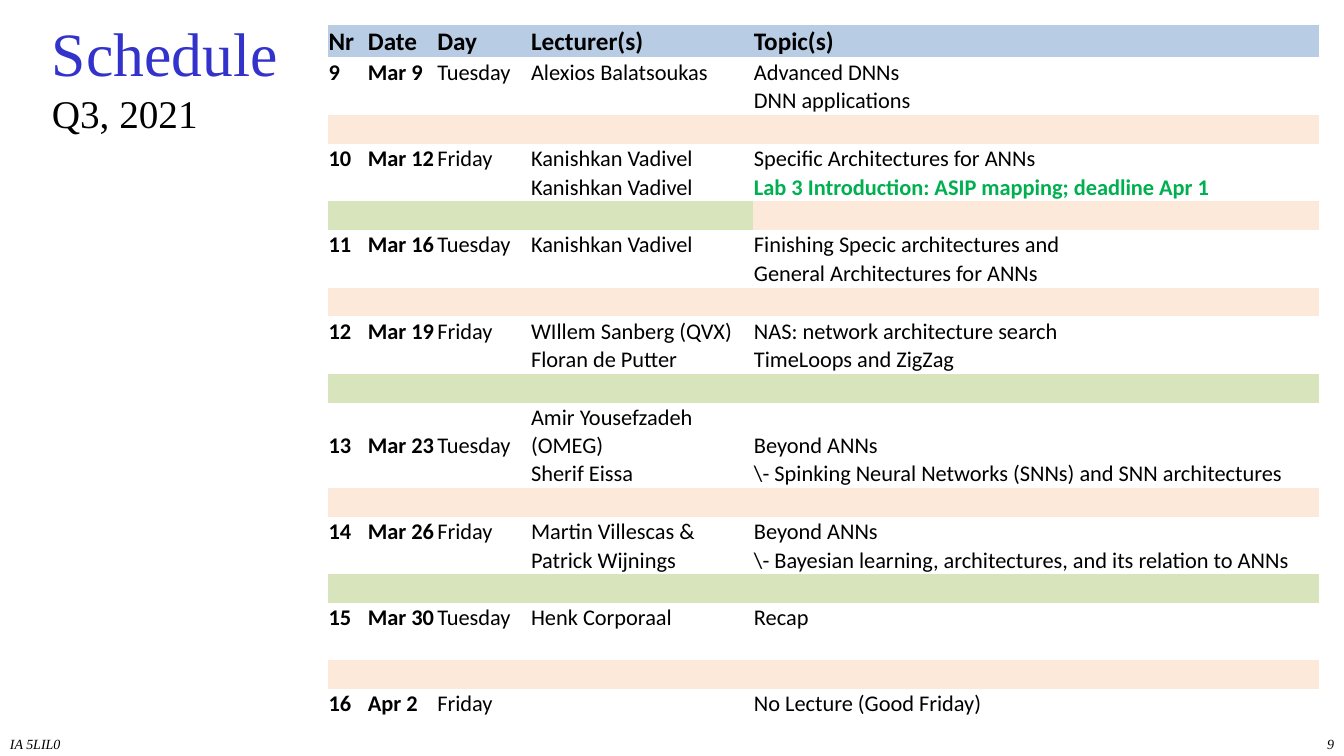
import dataclasses

import lxml.etree
import pptx
import pptx.dml.color
import pptx.enum.text
import pptx.oxml.ns
import pptx.util

Pt = pptx.util.Pt
ANCHOR = pptx.enum.text.MSO_ANCHOR
ALIGN = pptx.enum.text.PP_ALIGN


@dataclasses.dataclass(frozen=True)
class Theme:
    serif: str = "Times New Roman"
    sans: str = "Calibri"
    ink: str = "000000"
    title_blue: str = "3333CC"
    lab_green: str = "00B050"
    header_blue: str = "B8CCE4"
    midweek_peach: str = "FDE9D9"
    weekend_green: str = "D8E4BC"
    title_size: int = 44
    subtitle_size: int = 28
    header_size: int = 18
    body_size: int = 16
    footer_size: int = 10
    cell_margin: float = 0.72
    table_style: str = "{2D5ABB26-0587-4C30-8999-92F81FD0307C}"  # no style, no grid


class SlideBuilder:
    def __init__(self, slide, theme):
        self.slide = slide
        self.theme = theme

    def run(self, paragraph, text, size, font, color=None, bold=False, italic=False):
        run = paragraph.add_run()
        run.text = text
        run.font.size = Pt(size)
        run.font.name = font
        run.font.bold = bold
        run.font.italic = italic
        run.font.color.rgb = pptx.dml.color.RGBColor.from_string(color or self.theme.ink)

    def text_area(self, left, top, width, height, anchor=ANCHOR.TOP, align=ALIGN.LEFT):
        frame = self.slide.shapes.add_textbox(Pt(left), Pt(top), Pt(width), Pt(height)).text_frame
        frame.word_wrap = True
        frame.vertical_anchor = anchor
        frame.paragraphs[0].alignment = align
        return frame.paragraphs[0]

    def title(self, heading, subheading):
        theme = self.theme
        paragraph = self.text_area(30, 18, 902, 72, ANCHOR.MIDDLE)
        self.run(paragraph, heading, theme.title_size, theme.serif, theme.title_blue)
        paragraph.add_line_break()
        self.run(paragraph, subheading, theme.subtitle_size, theme.serif)

    def footer(self, text, left, align):
        paragraph = self.text_area(left, 522, 200, 18, align=align)
        self.run(paragraph, text, self.theme.footer_size, self.theme.serif, italic=True)

    def cell(self, cell, text, fill, size, bold, color):
        margin = Pt(self.theme.cell_margin)
        cell.margin_left = cell.margin_right = cell.margin_top = margin
        cell.margin_bottom = 0
        cell.vertical_anchor = ANCHOR.BOTTOM
        if fill:
            cell.fill.solid()
            cell.fill.fore_color.rgb = pptx.dml.color.RGBColor.from_string(fill)
        else:
            cell.fill.background()
        paragraph = cell.text_frame.paragraphs[0]
        if text:
            self.run(paragraph, text, size, self.theme.sans, color, bold)
        else:
            # Keeps an empty row as low as a row of text
            end = lxml.etree.SubElement(paragraph._p, pptx.oxml.ns.qn("a:endParaRPr"))
            end.set("sz", str(size * 100))
            latin = lxml.etree.SubElement(end, pptx.oxml.ns.qn("a:latin"))
            latin.set("typeface", self.theme.sans)

    def schedule(self, left, top, column_widths, row_heights, rows):
        theme = self.theme
        table = self.slide.shapes.add_table(
            len(rows), len(column_widths), Pt(left), Pt(top),
            Pt(sum(column_widths)), Pt(sum(row_heights))).table
        table.first_row = table.horz_banding = False
        style = table._tbl.tblPr.find(pptx.oxml.ns.qn("a:tableStyleId"))
        style.text = theme.table_style
        for column, width in zip(table.columns, column_widths):
            column.width = Pt(width)
        for row, height in zip(table.rows, row_heights):
            row.height = Pt(height)
        for row_number, (texts, fills) in enumerate(rows):
            header = row_number == 0
            size = theme.header_size if header else theme.body_size
            for column, (text, fill) in enumerate(zip(texts, fills)):
                lab = text.startswith("Lab")
                self.cell(table.cell(row_number, column), text, fill, size,
                          header or lab or column < 2,
                          theme.lab_green if lab else theme.ink)


# Number, date, day, then one (lecturer, topic) pair per line
LECTURES = [
    ("9", "Mar 9", "Tuesday", [("Alexios Balatsoukas", "Advanced DNNs"),
                               ("", "DNN applications")]),
    ("10", "Mar 12", "Friday", [
        ("Kanishkan Vadivel", "Specific Architectures for ANNs"),
        ("Kanishkan Vadivel", "Lab 3 Introduction: ASIP mapping; deadline Apr 1")]),
    ("11", "Mar 16", "Tuesday", [
        ("Kanishkan Vadivel", "Finishing Specic architectures and"),
        ("", "General Architectures for ANNs")]),
    ("12", "Mar 19", "Friday", [
        ("WIllem Sanberg (QVX)", "NAS: network architecture search"),
        ("Floran de Putter", "TimeLoops and ZigZag")]),
    ("13", "Mar 23", "Tuesday", [
        ("Amir Yousefzadeh (OMEG)", "Beyond ANNs"),
        ("Sherif Eissa", "\\- Spinking Neural Networks (SNNs) and SNN architectures")]),
    ("14", "Mar 26", "Friday", [
        ("Martin Villescas &", "Beyond ANNs"),
        ("Patrick Wijnings", "\\- Bayesian learning, architectures, and its relation to ANNs")]),
    ("15", "Mar 30", "Tuesday", [("Henk Corporaal", "Recap"), ("", "")]),
    ("16", "Apr 2", "Friday", [("", "No Lecture (Good Friday)")]),
]
HEADINGS = ("Nr", "Date", "Day", "Lecturer(s)", "Topic(s)")
COLUMN_WIDTHS = (28.1, 49.6, 67, 159.2, 404)
HEADER_HEIGHT, LINE_HEIGHT, WRAPPED_HEIGHT = 23, 20.57, 40.3


def schedule_rows(theme):
    """Return (texts, fills) for every row, with a coloured band between lectures."""
    columns = len(HEADINGS)
    rows = [(HEADINGS, [theme.header_blue] * columns)]
    for number, date, day, lines in LECTURES:
        for line, (lecturer, topic) in enumerate(lines):
            when = (number, date, day) if line == 0 else ("", "", "")
            rows.append(((*when, lecturer, topic), [None] * columns))
        if number != LECTURES[-1][0]:
            band = theme.weekend_green if day == "Friday" else theme.midweek_peach
            fills = [band] * columns
            if number == "10":
                fills[-1] = theme.midweek_peach
            rows.append(([""] * columns, fills))
    return rows


def main():
    presentation = pptx.Presentation()
    presentation.slide_width, presentation.slide_height = Pt(960), Pt(540)
    theme = Theme()
    builder = SlideBuilder(presentation.slides.add_slide(presentation.slide_layouts[6]), theme)

    # Title and footer
    builder.title("Schedule", "Q3, 2021")
    builder.footer("IA 5LIL0", 0, ALIGN.LEFT)
    builder.footer("9", 760, ALIGN.RIGHT)

    # Lecture schedule; the long lecturer name of lecture 13 takes two lines
    rows = schedule_rows(theme)
    heights = [HEADER_HEIGHT] + [
        WRAPPED_HEIGHT if texts[0] == "13" else LINE_HEIGHT for texts, _ in rows[1:]]
    builder.schedule(234, 18, COLUMN_WIDTHS, heights, rows)

    presentation.save("out.pptx")


if __name__ == "__main__":
    main()
